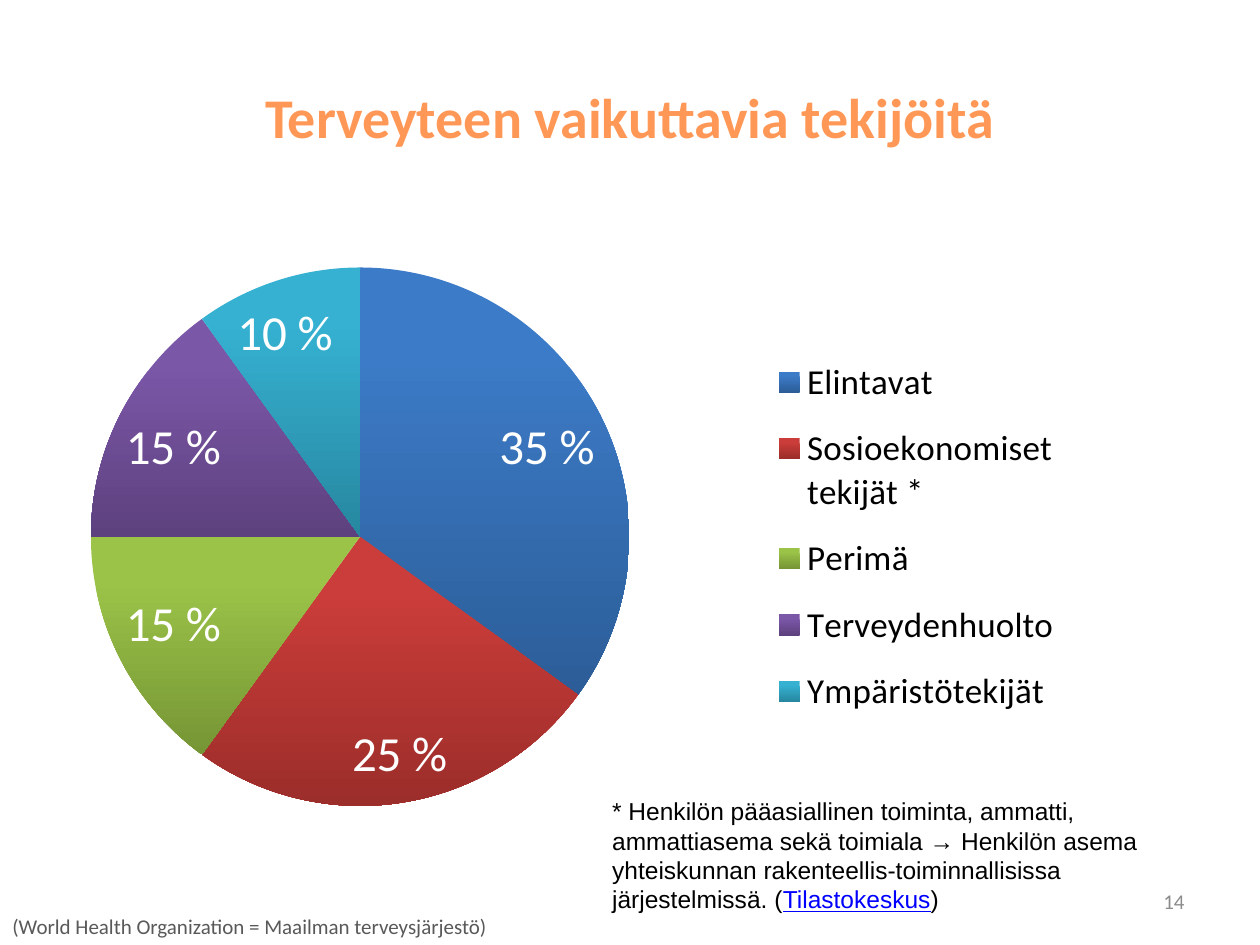
from lxml import etree
from pptx import Presentation
from pptx.chart.data import CategoryChartData
from pptx.dml.color import RGBColor
from pptx.enum.chart import XL_CHART_TYPE, XL_LABEL_POSITION, XL_LEGEND_POSITION
from pptx.enum.text import MSO_ANCHOR, PP_ALIGN
from pptx.oxml.ns import qn
from pptx.util import Inches, Pt

PIE = XL_CHART_TYPE.PIE
BEST_FIT = XL_LABEL_POSITION.BEST_FIT
LEGEND_RIGHT = XL_LEGEND_POSITION.RIGHT
TOP, MIDDLE = MSO_ANCHOR.TOP, MSO_ANCHOR.MIDDLE
LEFT, CENTER, RIGHT = PP_ALIGN.LEFT, PP_ALIGN.CENTER, PP_ALIGN.RIGHT

# category, percentage, colour at the top and at the bottom of the slice
FACTORS = [
    ("Elintavat", 35, "3C7BC7", "2C5D98"),
    ("Sosioekonomiset tekijät *", 25, "CB3D3A", "9B2D2A"),
    ("Perimä", 15, "9BC348", "769535"),
    ("Terveydenhuolto", 15, "7B57A8", "5D417E"),
    ("Ympäristötekijät", 10, "36B1D2", "2787A0"),
]


def rgb(value):
    return RGBColor.from_string(value)


def style_font(font, size, color, name="Calibri", bold=False):
    font.size, font.name, font.bold = Pt(size), name, bold
    font.color.rgb = rgb(color)


def place(sp, box):
    sp.left, sp.top, sp.width, sp.height = (Inches(v) for v in box)


def set_layout(element, x, y, w, h, inner=False):
    """Fix a chart part at fractions of the chart area."""
    for old in element.findall(qn("c:layout")):
        element.remove(old)
    layout = etree.Element(qn("c:layout"))
    manual = etree.SubElement(layout, qn("c:manualLayout"))
    settings = [("layoutTarget", "inner")] if inner else []
    settings += [("xMode", "edge"), ("yMode", "edge"),
                 ("x", x), ("y", y), ("w", w), ("h", h)]
    for tag, value in settings:
        etree.SubElement(manual, qn(f"c:{tag}")).set("val", str(value))
    position = element.find(qn("c:legendPos"))
    if position is None:
        element.insert(0, layout)
    else:
        position.addnext(layout)


def add_title(slide, box, text):
    title = slide.shapes.title
    place(title, box)
    tf = title.text_frame
    tf.text = text
    tf.vertical_anchor = MIDDLE
    p = tf.paragraphs[0]
    p.alignment = CENTER
    style_font(p.runs[0].font, 32, "FF9856", bold=True)


def add_factor_pie(slide, box):
    data = CategoryChartData(number_format='0" %"')
    data.categories = [factor[0] for factor in FACTORS]
    data.add_series("Series 1", [factor[1] for factor in FACTORS])
    chart = slide.shapes.add_chart(PIE, *(Inches(v) for v in box), data).chart
    style_font(chart.font, 18, "000000")
    chart.has_title = False

    chart.has_legend = True
    legend = chart.legend
    legend.position = LEGEND_RIGHT
    legend.include_in_layout = False
    style_font(legend.font, 20, "000000")
    plot = chart.plots[0]
    plot_area = chart._chartSpace.chart.plotArea
    set_layout(plot_area, 0.04, 0.09, 0.46, 0.82, inner=True)
    set_layout(legend._element, 0.61, 0.2, 0.27, 0.6)

    plot.vary_by_categories = True
    plot.has_data_labels = True
    labels = plot.data_labels
    labels.show_value = True
    labels.number_format, labels.number_format_is_linked = '0" %"', False
    labels.position = BEST_FIT
    style_font(labels.font, 28, "FFFFFF")

    for i, (_, _, top, bottom) in enumerate(FACTORS):
        fill = plot.series[0].points[i].format.fill
        fill.gradient()
        fill.gradient_angle = 270
        for stop, color, position in zip(fill.gradient_stops, (top, bottom), (0.2, 1)):
            stop.color.rgb = rgb(color)
            stop.position = position


def add_note(slide, box, runs, size, font="Calibri", align=LEFT, anchor=TOP):
    """Add one paragraph made of (text, colour, underline) runs."""
    sp = slide.shapes.add_textbox(*(Inches(v) for v in box))
    tf = sp.text_frame
    tf.word_wrap = True
    tf.vertical_anchor = anchor
    p = tf.paragraphs[0]
    p.alignment = align
    for text, color, underline in runs:
        r = p.add_run()
        r.text = text
        style_font(r.font, size, color, font)
        r.font.underline = underline


def main():
    prs = Presentation()
    prs.slide_width, prs.slide_height = Inches(10), Inches(7.5)
    slide = prs.slides.add_slide(prs.slide_layouts[5])
    add_title(slide, (0.5, 0.3, 9, 1.25), "Terveyteen vaikuttavia tekijöitä")
    add_factor_pie(slide, (0.35, 1.62, 9.29, 5.28))
    add_note(slide, (0, 7.2, 4.29, 0.3),
             [("(World Health Organization = Maailman terveysjärjestö)", "595959", False)], 12)
    add_note(slide, (7.17, 6.95, 2.33, 0.4), [("14", "8C8C8C", False)], 12,
             align=RIGHT, anchor=MIDDLE)
    add_note(slide, (4.76, 6.27, 4.65, 1.04), [
        ("* Henkilön pääasiallinen toiminta, ammatti, ammattiasema sekä toimiala → "
         "Henkilön asema yhteiskunnan rakenteellis-toiminnallisissa järjestelmissä. (",
         "000000", False),
        ("Tilastokeskus", "0000FF", True),
        (")", "000000", False),
    ], 14, "Arial")
    prs.save("out.pptx")


if __name__ == "__main__":
    main()
